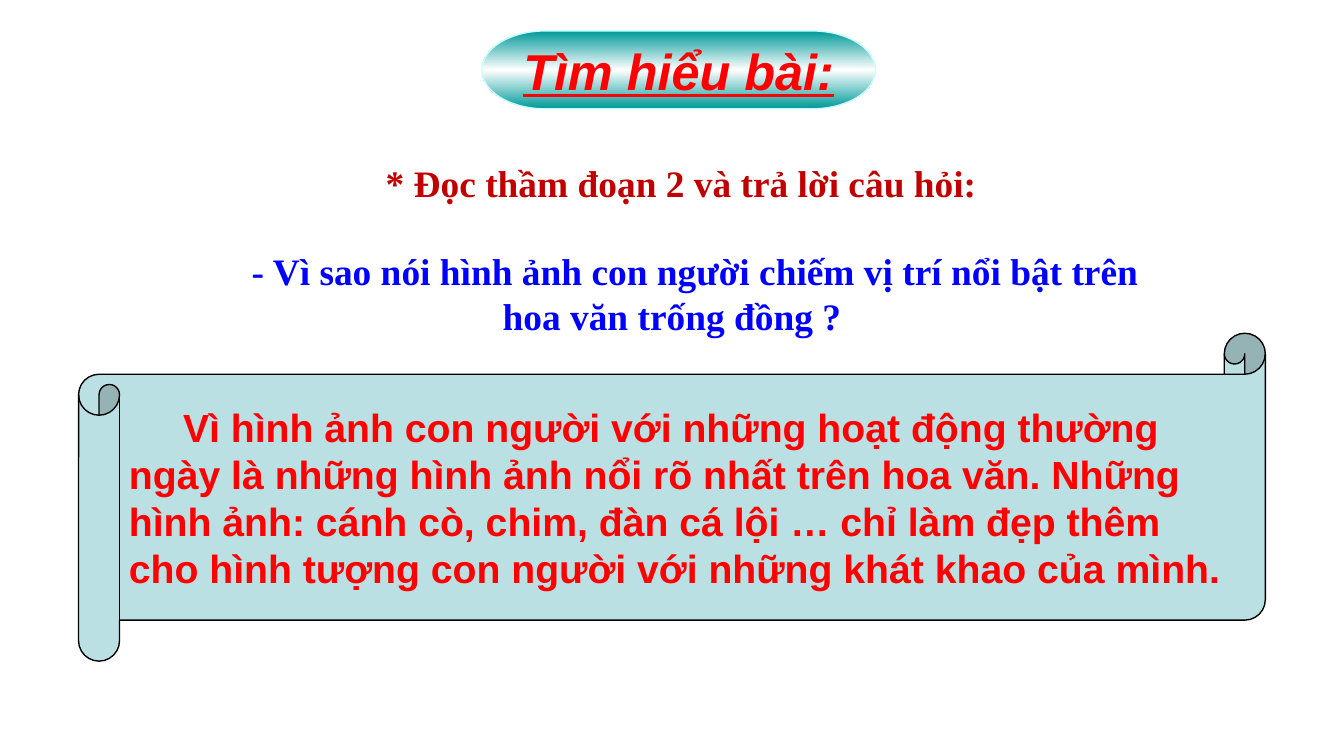
from copy import deepcopy
from pptx import Presentation
from pptx.dml.color import RGBColor
from pptx.enum.shapes import MSO_SHAPE
from pptx.enum.text import MSO_ANCHOR, PP_ALIGN
from pptx.oxml.ns import qn
from pptx.util import Pt

PX = 4572  # 200 px to the inch
RED = RGBColor(0xFF, 0, 0)
CRIMSON = RGBColor(0xC0, 0, 0)
BLUE = RGBColor(0, 0, 0xFF)
BLACK = RGBColor(0, 0, 0)
WHITE = RGBColor(0xFF, 0xFF, 0xFF)
TEAL = RGBColor(0, 0x99, 0x99)
AQUA = RGBColor(0xCC, 0xFF, 0xFF)
PALE = RGBColor(0xBB, 0xE0, 0xE3)

TITLE = "Tìm hiểu bài:"
TASK = "* Đọc thầm đoạn 2 và trả lời câu hỏi:"
QUESTION = "- Vì sao nói hình ảnh con người chiếm vị trí nổi bật trên hoa văn trống đồng ?"
ANSWER = [
    "Vì hình ảnh con người với những hoạt động thường",
    "ngày là những hình ảnh nổi rõ nhất trên hoa văn. Những",
    "hình ảnh: cánh cò, chim, đàn cá lội … chỉ làm đẹp thêm",
    "cho hình tượng con người với những khát khao của mình.",
]


def write(shape, lines, font, size, color, align=PP_ALIGN.CENTER, indent=0, wrap=True):
    """Fill the shape with bold lines; the indent, in points, is for the first."""
    frame = shape.text_frame
    frame.word_wrap = wrap
    frame.margin_left = frame.margin_right = 14 * PX
    frame.margin_top = frame.margin_bottom = 8 * PX
    frame.text = "\n".join(lines)
    for par in frame.paragraphs:
        par.alignment = align
        for run in par.runs:
            run.font.name, run.font.size, run.font.bold = font, Pt(size), True
            run.font.color.rgb = color
    if indent:
        frame.paragraphs[0]._p.get_or_add_pPr().set("indent", str(Pt(indent)))


def add_box(slide, *area):
    return slide.shapes.add_textbox(*(n * PX for n in area))


def add_form(slide, kind, line, *area):
    form = slide.shapes.add_shape(kind, *(n * PX for n in area))
    form.shadow.inherit = False
    form.line.color.rgb = line
    form.line.width = Pt(0.75)
    form.text_frame.vertical_anchor = MSO_ANCHOR.MIDDLE
    return form


def blend(form, colors):
    """Give the form a vertical gradient with three evenly spaced colours."""
    form.fill.gradient()
    form.fill.gradient_angle = 90
    stops = form._element.spPr.find(".//" + qn("a:gsLst"))
    stops.append(deepcopy(stops[-1]))
    for i, (stop, color) in enumerate(zip(form.fill.gradient_stops, colors)):
        stop.position = i / 2
        stop.color.rgb = color


deck = Presentation()
deck.slide_width, deck.slide_height = 2000 * PX, 1125 * PX
slide = deck.slides.add_slide(deck.slide_layouts[6])

question = add_box(slide, 288, 362, 1424, 150)
write(question, [QUESTION], "Times New Roman", 20, BLUE, indent=25)

scroll = add_form(slide, MSO_SHAPE.HORIZONTAL_SCROLL, BLACK, 117, 496, 1766, 488)
scroll.fill.solid()
scroll.fill.fore_color.rgb = PALE
write(scroll, ANSWER, "Arial", 21, RED, PP_ALIGN.JUSTIFY, indent=29, wrap=False)

task = add_box(slide, 250, 230, 1500, 82)
write(task, [TASK], "Times New Roman", 20, CRIMSON, indent=10)

title = add_form(slide, MSO_SHAPE.FLOWCHART_TERMINATOR, AQUA, 717, 46, 586, 116)
blend(title, [TEAL, WHITE, TEAL])
write(title, [TITLE], "Arial", 27, RED, wrap=False)
font = title.text_frame.paragraphs[0].runs[0].font
font.italic = font.underline = True

deck.save("out.pptx")
